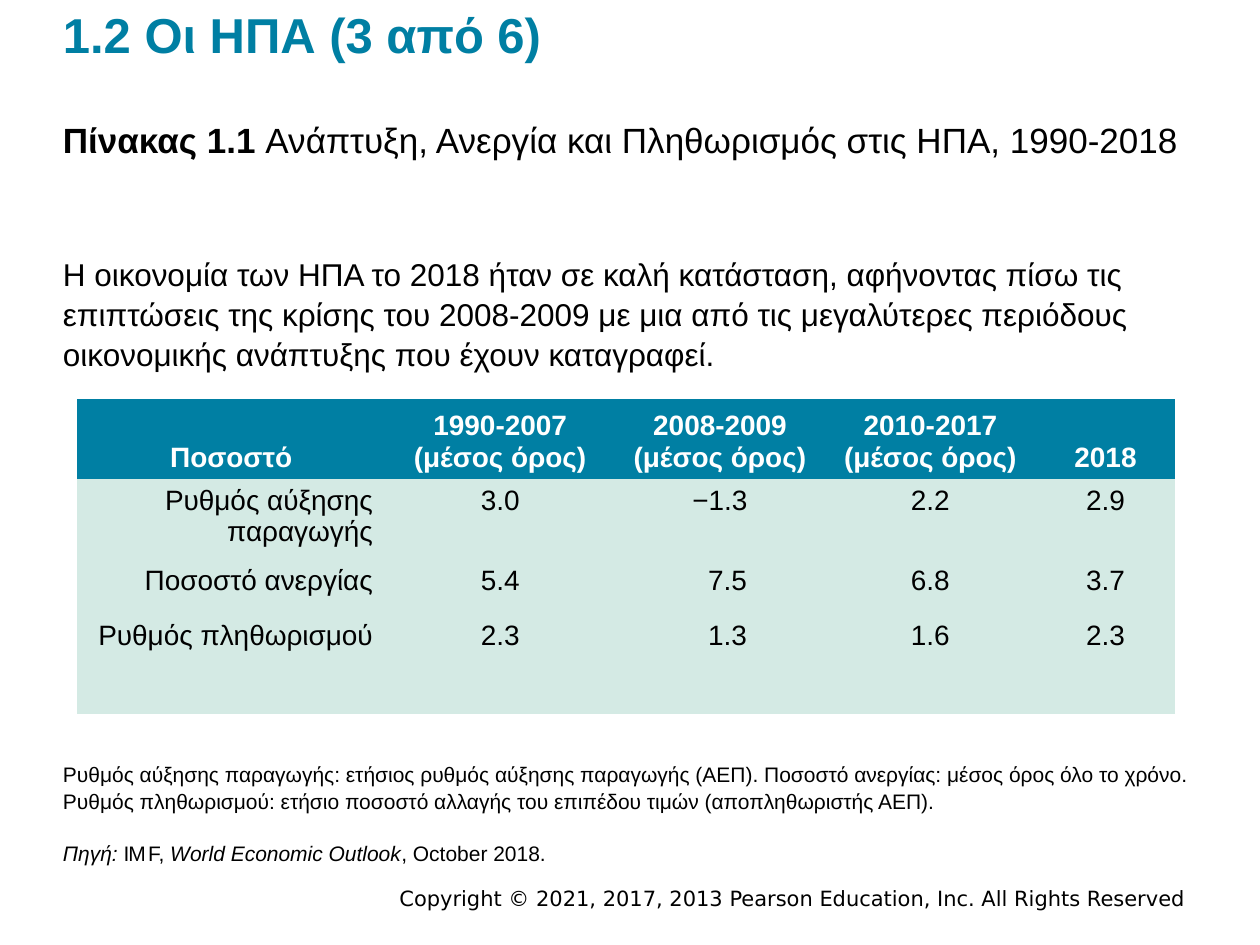
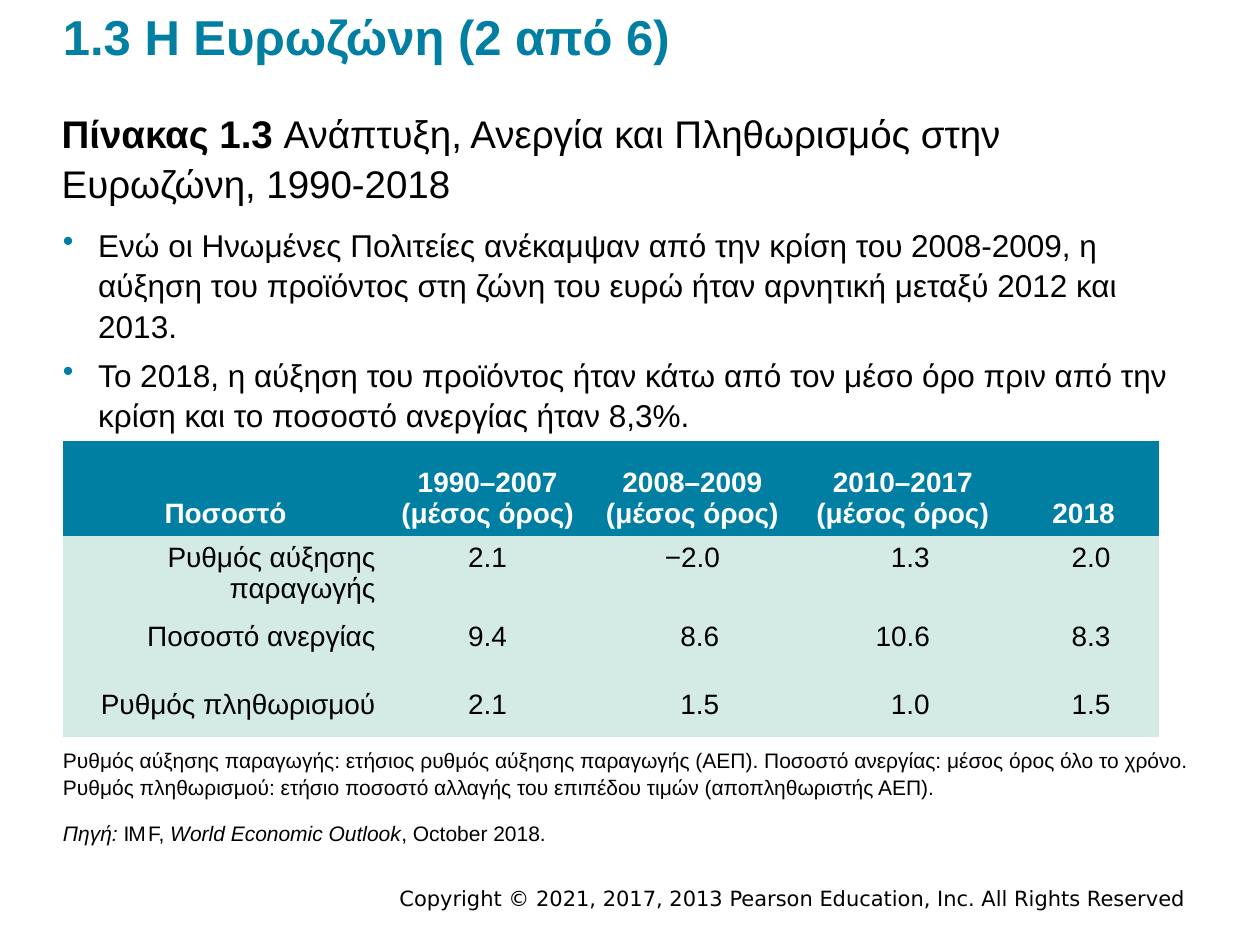
"""Builds two slides of growth, unemployment and inflation tables for the USA and the Euro area."""
from dataclasses import dataclass
from typing import NamedTuple

from lxml.etree import SubElement
from pptx import Presentation
from pptx.dml.color import RGBColor as Rgb
from pptx.enum.text import MSO_ANCHOR as Anchor, PP_ALIGN as Align
from pptx.oxml.ns import qn
from pptx.slide import Slide
from pptx.table import _Cell as Cell
from pptx.text.text import _Paragraph as Paragraph
from pptx.util import Emu, Pt

EMU_PER_PX = 9144
NO_GRID_STYLE = "{2D5ABB26-0587-4C30-8999-92F81FD0307C}"


@dataclass(frozen=True)
class Theme:
    """Colours, fonts and type sizes shared by the slides."""
    accent: Rgb = Rgb(0x00, 0x7F, 0xA3)
    band: Rgb = Rgb(0xD4, 0xEA, 0xE4)
    ink: Rgb = Rgb(0, 0, 0)
    paper: Rgb = Rgb(0xFF, 0xFF, 0xFF)
    font: str = "Arial"
    footer_font: str = "DejaVu Sans"
    title_size: int = 28
    body_size: int = 18
    table_size: int = 16
    note_size: int = 12
    line_spacing: float = 1.07
    bullet_gap: float = 5.2


THEME = Theme()


class Box(NamedTuple):
    """A rectangle in px."""
    left: int
    top: int
    width: int
    height: int


class Span(NamedTuple):
    """A stretch of text with its own emphasis and letter spacing."""
    text: str
    bold: bool = False
    italic: bool = False
    spacing: int = 0


@dataclass(frozen=True)
class TextStyle:
    """How the paragraphs of a text box look."""
    size: int
    color: Rgb = THEME.ink
    font: str = THEME.font
    bold: bool | None = None
    align: Align = Align.LEFT
    anchor: Anchor = Anchor.TOP
    line_spacing: float | None = THEME.line_spacing
    bulleted: bool = False
    inset: tuple[int, int] = (0, 0)


@dataclass(frozen=True)
class RateTable:
    """Rates by period; signed columns keep room for a leading character."""
    left: int
    top: int
    widths: tuple[int, ...]
    heights: tuple[int, ...]
    periods: tuple[str, ...]
    rates: tuple[tuple[str, ...], ...]
    signed_columns: tuple[int, ...]


@dataclass(frozen=True)
class Page:
    """Everything that differs between the slides."""
    title: str
    title_height: int
    caption: tuple[Span, ...]
    caption_box: Box
    caption_size: int
    body: tuple[str, ...]
    body_box: Box
    bulleted: bool
    table: RateTable
    definitions_top: int
    source_top: int


TITLE = TextStyle(THEME.title_size, THEME.accent, bold=True, anchor=Anchor.BOTTOM, line_spacing=None)
NOTE = TextStyle(THEME.note_size)
FOOTER = TextStyle(THEME.note_size, font=THEME.footer_font, align=Align.RIGHT,
                   line_spacing=None, inset=(10, 5))

COPYRIGHT = "Copyright © 2021, 2017, 2013 Pearson Education, Inc. All Rights Reserved"
DEFINITIONS = (
    "Ρυθμός αύξησης παραγωγής: ετήσιος ρυθμός αύξησης παραγωγής (ΑΕΠ). "
    "Ποσοστό ανεργίας: μέσος όρος όλο το χρόνο. "
    "Ρυθμός πληθωρισμού: ετήσιο ποσοστό αλλαγής του επιπέδου τιμών (αποπληθωριστής ΑΕΠ)."
)
SOURCE = (
    Span("Πηγή: ", italic=True),
    Span("I M ", spacing=-200),
    Span("F, "),
    Span("World Economic Outlook", italic=True),
    Span(", October 2018."),
)
CORNER = "Ποσοστό"
AVERAGE = "(μέσος όρος)"
LATEST_YEAR = "2018"
RATE_NAMES = ("Ρυθμός αύξησης παραγωγής", "Ποσοστό ανεργίας", "Ρυθμός πληθωρισμού")

PAGES = (
    Page(
        title="1.2 Οι ΗΠΑ (3 από 6)",
        title_height=50,
        caption=(Span("Πίνακας 1.1 ", bold=True),
                 Span("Ανάπτυξη, Ανεργία και Πληθωρισμός στις ΗΠΑ, 1990-2018")),
        caption_box=Box(50, 92, 900, 43),
        caption_size=20,
        body=("Η οικονομία των ΗΠΑ το 2018 ήταν σε καλή κατάσταση, αφήνοντας πίσω τις "
              "επιπτώσεις της κρίσης του 2008-2009 με μια από τις μεγαλύτερες περιόδους "
              "οικονομικής ανάπτυξης που έχουν καταγραφεί.",),
        body_box=Box(50, 200, 900, 125),
        bulleted=False,
        table=RateTable(
            61, 317, (245, 182, 167, 167, 111), (58, 57, 44, 79),
            ("1990-2007", "2008-2009", "2010-2017"),
            (("3.0", "−1.3", "2.2", "2.9"),
             ("5.4", "7.5", "6.8", "3.7"),
             ("2.3", "1.3", "1.6", "2.3")),
            signed_columns=(2,)),
        definitions_top=603,
        source_top=666,
    ),
    Page(
        title="1.3 Η Ευρωζώνη (2 από 6)",
        title_height=52,
        caption=(Span("Πίνακας 1.3 ", bold=True),
                 Span("Ανάπτυξη, Ανεργία και Πληθωρισμός στην Ευρωζώνη, 1990-2018")),
        caption_box=Box(49, 85, 900, 73),
        caption_size=22,
        body=("Ενώ οι Ηνωμένες Πολιτείες ανέκαμψαν από την κρίση του 2008-2009, η αύξηση τoυ "
              "προϊόντος στη ζώνη του ευρώ ήταν αρνητική μεταξύ 2012 και 2013.",
              "Το 2018, η αύξηση του προϊόντος ήταν κάτω από τον μέσο όρο πριν από την κρίση "
              "και το ποσοστό ανεργίας ήταν 8,3%."),
        body_box=Box(50, 177, 900, 189),
        bulleted=True,
        table=RateTable(
            50, 350, (258, 158, 167, 167, 120), (75, 54, 54, 43),
            ("1990–2007", "2008–2009", "2010–2017"),
            (("2.1", "−2.0", "1.3", "2.0"),
             ("9.4", "8.6", "10.6", "8.3"),
             ("2.1", "1.5", "1.0", "1.5")),
            signed_columns=(2, 3, 4)),
        definitions_top=592,
        source_top=650,
    ),
)


def px(length: int) -> Emu:
    """Turn px into EMU."""
    return Emu(length * EMU_PER_PX)


def add_bullet(paragraph: Paragraph) -> None:
    """Give a paragraph a hanging accent-coloured bullet."""
    properties = paragraph._p.get_or_add_pPr()
    properties.set("marL", str(px(28)))
    properties.set("indent", str(px(-28)))
    color = SubElement(properties, qn("a:buClr"))
    SubElement(color, qn("a:srgbClr"), val=str(THEME.accent))
    SubElement(properties, qn("a:buChar"), char="•")


def set_font(paragraph: Paragraph, style: TextStyle) -> None:
    """Apply alignment and font to a paragraph."""
    paragraph.alignment = style.align
    font = paragraph.font
    font.name, font.size, font.bold = style.font, Pt(style.size), style.bold
    font.color.rgb = style.color


def add_spans(paragraph: Paragraph, spans: tuple[Span, ...]) -> None:
    """Write spans as runs that carry only their own emphasis."""
    for span in spans:
        run = paragraph.add_run()
        run.text = span.text
        run.font.bold, run.font.italic = span.bold, span.italic
        if span.spacing:
            run._r.get_or_add_rPr().set("spc", str(span.spacing))


def add_text(slide: Slide, box: Box, content: tuple[str | tuple[Span, ...], ...],
             style: TextStyle) -> None:
    """Add a text box with one paragraph for each item of content."""
    frame = slide.shapes.add_textbox(*map(px, box)).text_frame
    frame.word_wrap = True
    frame.vertical_anchor = style.anchor
    frame.margin_left = frame.margin_right = px(style.inset[0])
    frame.margin_top = frame.margin_bottom = px(style.inset[1])
    for index, item in enumerate(content):
        paragraph = frame.add_paragraph() if index else frame.paragraphs[0]
        if index:
            paragraph.space_before = Pt(THEME.bullet_gap)
        if style.line_spacing:
            paragraph.line_spacing = style.line_spacing
        if style.bulleted:
            add_bullet(paragraph)
        set_font(paragraph, style)
        if isinstance(item, str):
            paragraph.add_run().text = item
        else:
            add_spans(paragraph, item)


def fill_cell(cell: Cell, text: str, fill: Rgb, style: TextStyle) -> None:
    """Write and colour one table cell."""
    cell.fill.solid()
    cell.fill.fore_color.rgb = fill
    cell.vertical_anchor = style.anchor
    cell.text = text
    for paragraph in cell.text_frame.paragraphs:
        set_font(paragraph, style)


def add_rate_table(slide: Slide, spec: RateTable) -> None:
    """Add the table of rates by period."""
    size = THEME.table_size
    header = TextStyle(size, THEME.paper, bold=True, align=Align.CENTER, anchor=Anchor.BOTTOM)
    name_style = TextStyle(size, align=Align.RIGHT)
    rate_style = TextStyle(size, align=Align.CENTER)
    table = slide.shapes.add_table(
        len(spec.heights), len(spec.widths), px(spec.left), px(spec.top),
        px(sum(spec.widths)), px(sum(spec.heights))).table
    table._tbl.tblPr.find(qn("a:tableStyleId")).text = NO_GRID_STYLE
    table.horz_banding = False
    for column, width in zip(table.columns, spec.widths):
        column.width = px(width)
    for row, height in zip(table.rows, spec.heights):
        row.height = px(height)

    headings = (CORNER, *(f"{period}\n{AVERAGE}" for period in spec.periods), LATEST_YEAR)
    for col, heading in enumerate(headings):
        fill_cell(table.cell(0, col), heading, THEME.accent, header)
    for row, (name, rates) in enumerate(zip(RATE_NAMES, spec.rates), start=1):
        fill_cell(table.cell(row, 0), name, THEME.band, name_style)
        for col, rate in enumerate(rates, start=1):
            cell = table.cell(row, col)
            fill_cell(cell, rate, THEME.band, rate_style)
            if col in spec.signed_columns and len(rate) < 4:
                cell.margin_left = px(22)


def add_page(slide: Slide, page: Page) -> None:
    """Draw one slide."""
    add_text(slide, Box(168, 698, 783, 30), (COPYRIGHT,), FOOTER)
    add_text(slide, Box(50, 0, 900, page.title_height), (page.title,), TITLE)
    add_text(slide, page.body_box, page.body, TextStyle(THEME.body_size, bulleted=page.bulleted))
    add_text(slide, page.caption_box, (page.caption,), TextStyle(page.caption_size))
    add_rate_table(slide, page.table)
    add_text(slide, Box(50, page.definitions_top, 900, 55), (DEFINITIONS,), NOTE)
    add_text(slide, Box(50, page.source_top, 900, 25), (SOURCE,), NOTE)


def main() -> None:
    """Build and save the presentation."""
    deck = Presentation()
    deck.slide_width, deck.slide_height = px(1000), px(750)
    blank = deck.slide_layouts[6]
    for page in PAGES:
        add_page(deck.slides.add_slide(blank), page)
    deck.save("out.pptx")


if __name__ == "__main__":
    main()
